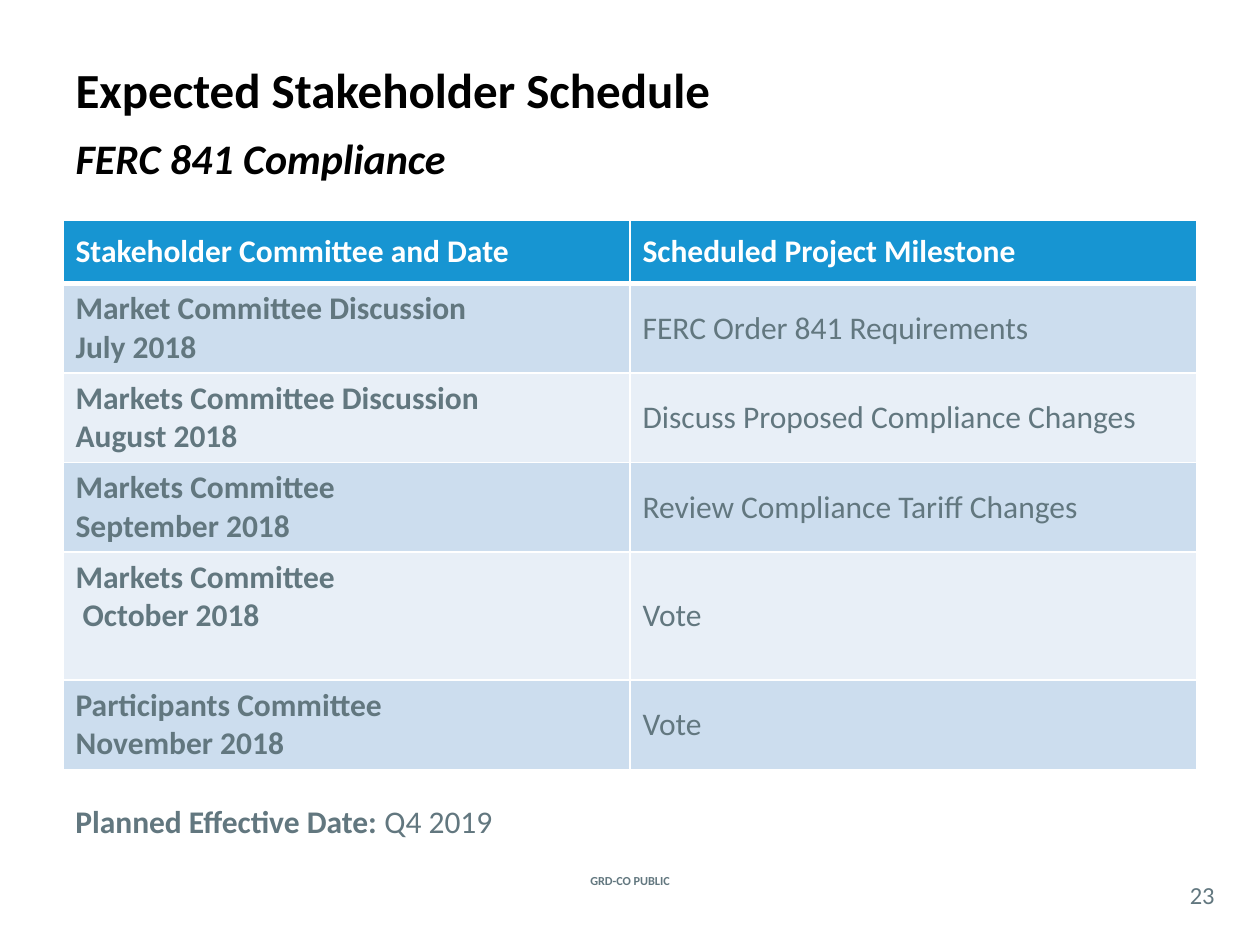
from lxml import etree
from pptx import Presentation
from pptx.dml.color import RGBColor
from pptx.enum import text
from pptx.oxml import ns
from pptx.util import Pt

FONT = "Calibri"
COLORS = {
    "black": "000000",
    "white": "FFFFFF",
    "slate": "62777F",
    "header": "1795D2",
    "band_dark": "CCDDEE",
    "band_light": "E8EFF7",
}
HEADINGS = ("Stakeholder Committee and Date", "Scheduled Project Milestone")
MILESTONES = [
    ("Market Committee Discussion\nJuly 2018", "FERC Order 841 Requirements"),
    ("Markets Committee Discussion\nAugust 2018", "Discuss Proposed Compliance Changes"),
    ("Markets Committee\nSeptember 2018", "Review Compliance Tariff Changes"),
    ("Markets Committee\n October 2018", "Vote"),
    ("Participants Committee\nNovember 2018", "Vote"),
]
ROW_HEIGHTS = (36, 51, 51, 51, 73, 51)
LEFT, WIDTH = 36, 648
MIDDLE = text.MSO_ANCHOR.MIDDLE


def style_run(r, size, color, bold=False, italic=False):
    r.font.name = FONT
    r.font.size = Pt(size)
    r.font.bold = bold
    r.font.italic = italic
    r.font.color.rgb = RGBColor.from_string(COLORS[color])


def style_text(tf, size, color, bold=False, italic=False, align=text.PP_ALIGN.LEFT):
    for p in tf.paragraphs:
        p.alignment = align
        p.space_before = Pt(0)
        for r in p.runs:
            style_run(r, size, color, bold, italic)


def fill_placeholder(sp, words, top, height, size, anchor, italic=False):
    sp.left, sp.top, sp.width, sp.height = Pt(LEFT), Pt(top), Pt(WIDTH), Pt(height)
    tf = sp.text_frame
    tf.text = words
    tf.auto_size = text.MSO_AUTO_SIZE.NONE
    tf.vertical_anchor = anchor
    pPr = tf.paragraphs[0]._p.get_or_add_pPr()
    pPr.set("marL", "0")
    pPr.set("indent", "0")
    etree.SubElement(pPr, ns.qn("a:buNone"))
    style_text(tf, size, "black", True, italic)


def add_label(s, words, left, top, width, height):
    tf = s.shapes.add_textbox(Pt(left), Pt(top), Pt(width), Pt(height)).text_frame
    tf.text = words
    return tf


def set_borders(cell, widths):
    tcPr = cell._tc.get_or_add_tcPr()
    for i, (side, width) in enumerate(widths.items()):
        ln = etree.Element(ns.qn(f"a:ln{side}"), w=str(Pt(width)))
        fill = etree.SubElement(ln, ns.qn("a:solidFill"))
        etree.SubElement(fill, ns.qn("a:srgbClr"), val=COLORS["white"])
        tcPr.insert(i, ln)


def fill_cell(cell, words, row, col):
    header = row == 0
    band = "header" if header else "band_dark" if row % 2 else "band_light"
    cell.text = words
    cell.fill.solid()
    cell.fill.fore_color.rgb = RGBColor.from_string(COLORS[band])
    cell.vertical_anchor = MIDDLE if header or col else text.MSO_ANCHOR.TOP
    style_text(cell.text_frame, 18, "white" if header else "slate", header or col == 0)
    set_borders(cell, {"L": 1, "R": 1, "T": 3 if row == 1 else 1, "B": 3 if header else 1})


def add_schedule(s):
    rows = [HEADINGS, *MILESTONES]
    table = s.shapes.add_table(
        len(rows), 2, Pt(LEFT), Pt(126), Pt(WIDTH), Pt(sum(ROW_HEIGHTS))
    ).table
    for i, (words, height) in enumerate(zip(rows, ROW_HEIGHTS)):
        table.rows[i].height = Pt(height)
        for j, entry in enumerate(words):
            fill_cell(table.cell(i, j), entry, i, j)


def add_effective_date(s):
    tf = add_label(s, "Planned Effective Date: ", LEFT, 455, 265, 29)
    tf.word_wrap = False
    style_text(tf, 18, "slate", True)
    r = tf.paragraphs[0].add_run()
    r.text = "Q4 2019"
    style_run(r, 18, "slate")


def add_footer(s):
    tf = add_label(s, "GRD-CO PUBLIC", 307, 484, 106, 39)
    tf.vertical_anchor = MIDDLE
    tf.word_wrap = True
    style_text(tf, 7, "slate", True, align=text.PP_ALIGN.CENTER)

    tf = add_label(s, "23", 672, 501, 30, 21)
    tf.vertical_anchor = MIDDLE
    tf.margin_left = tf.margin_right = tf.margin_top = tf.margin_bottom = 0
    style_text(tf, 14, "slate", align=text.PP_ALIGN.CENTER)


def main():
    prs = Presentation()
    prs.slide_width, prs.slide_height = Pt(720), Pt(540)
    s = prs.slides.add_slide(prs.slide_layouts[1])
    fill_placeholder(s.shapes.title, "Expected Stakeholder Schedule", 30, 42, 28, MIDDLE)
    fill_placeholder(
        s.placeholders[1], "FERC 841 Compliance", 72, 36, 24, text.MSO_ANCHOR.TOP, True
    )
    add_schedule(s)
    add_effective_date(s)
    add_footer(s)
    prs.save("out.pptx")


if __name__ == "__main__":
    main()
